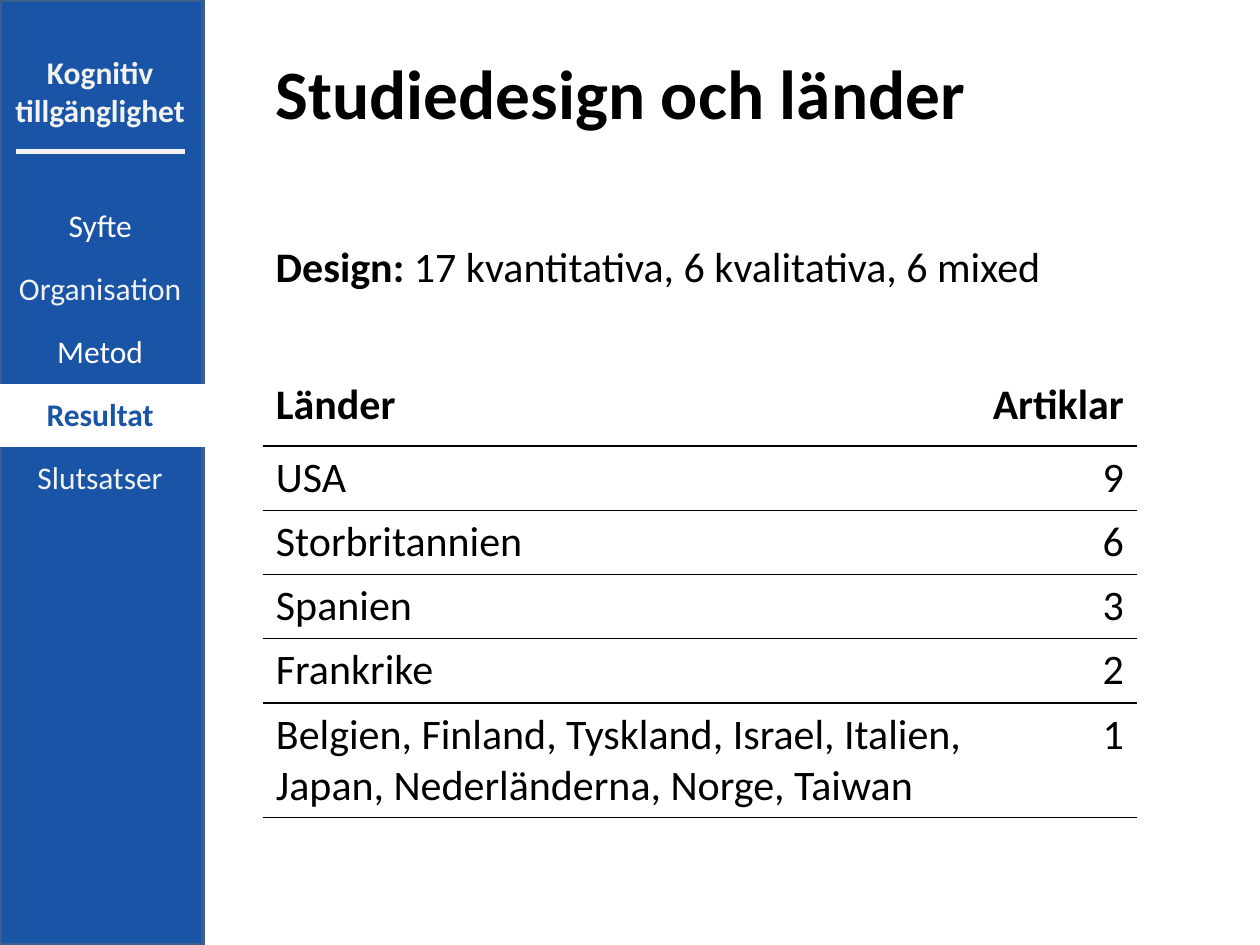
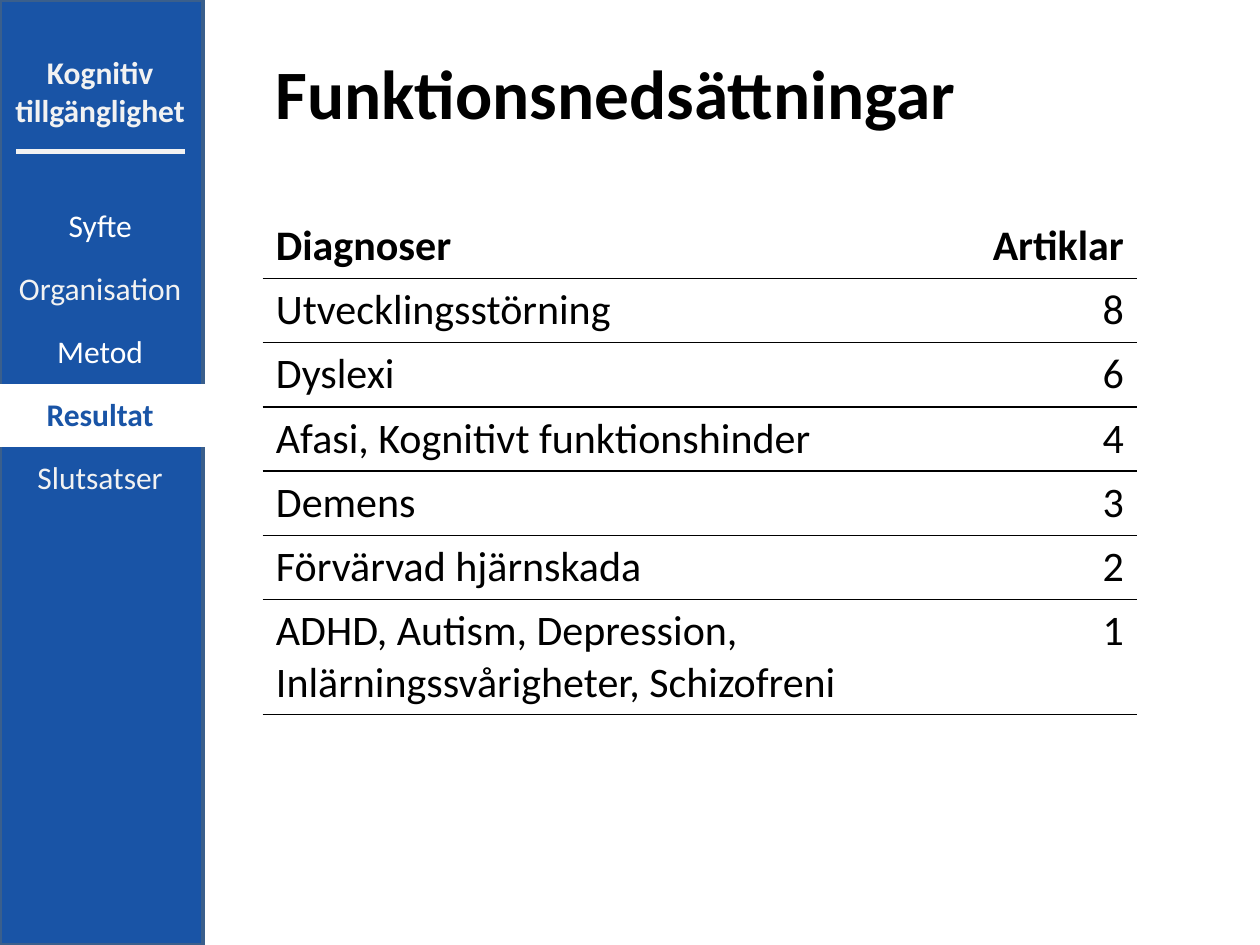
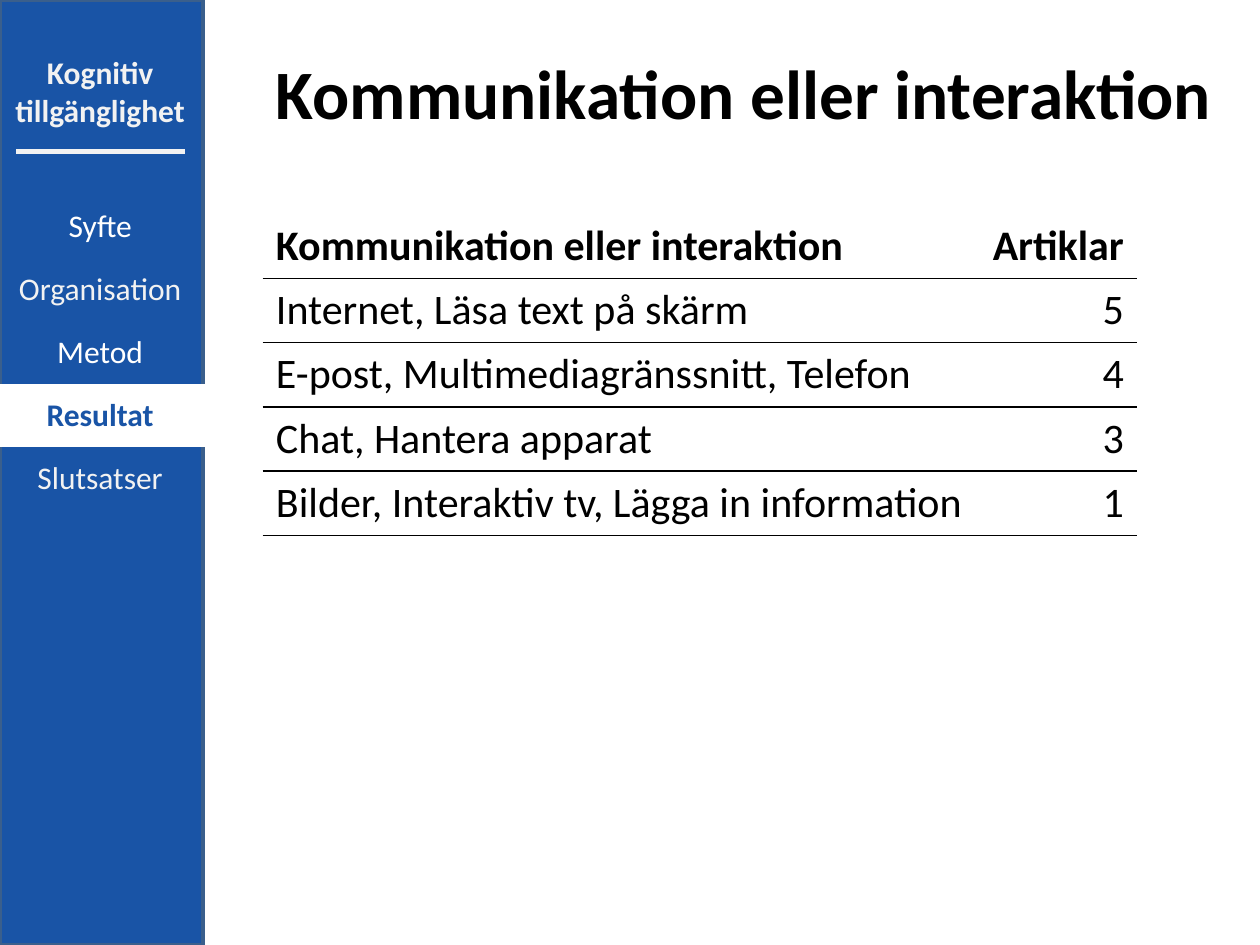
import dataclasses

import lxml.etree
import pptx
import pptx.dml.color
import pptx.enum.shapes
import pptx.enum.text
import pptx.oxml.ns
import pptx.util

Inches = pptx.util.Inches
Align = pptx.enum.text.PP_ALIGN
Anchor = pptx.enum.text.MSO_ANCHOR
qn = pptx.oxml.ns.qn


@dataclasses.dataclass(frozen=True)
class Theme:
    """Colours, type sizes and shared measures of the deck."""
    font: str = "Calibri"
    blue: str = "1954A6"
    edge: str = "3A5F8C"
    pale: str = "F2F2F2"
    white: str = "FFFFFF"
    black: str = "000000"
    head: float = 39.6
    body: float = 24
    menu: float = 18
    left: float = 2.09
    side: float = 1.61
    row: float = 0.51
    plain: str = "{2D5ABB26-0587-4C30-8999-92F81FD0307C}"


THEME = Theme()
MENU = [
    ("Syfte", THEME.white),
    ("Organisation", THEME.pale),
    ("Metod", THEME.white),
    ("Resultat", THEME.blue),
    ("Slutsatser", THEME.pale),
]
ACTIVE = "Resultat"
LANDS = [
    ("Länder", "Artiklar"),
    ("USA", "9"),
    ("Storbritannien", "6"),
    ("Spanien", "3"),
    ("Frankrike", "2"),
    ("Belgien, Finland, Tyskland, Israel, Italien, Japan, Nederländerna, "
     "Norge, Taiwan", "1"),
]
NEEDS = [
    ("Diagnoser", "Artiklar"),
    ("Utvecklingsstörning", "8"),
    ("Dyslexi", "6"),
    ("Afasi, Kognitivt funktionshinder", "4"),
    ("Demens", "3"),
    ("Förvärvad hjärnskada", "2"),
    ("ADHD, Autism, Depression, Inlärningssvårigheter, Schizofreni", "1"),
]
MEDIA = [
    ("Kommunikation eller interaktion", "Artiklar"),
    ("Internet, Läsa text på skärm", "5"),
    ("E-post, Multimediagränssnitt, Telefon", "4"),
    ("Chat, Hantera apparat", "3"),
    ("Bilder, Interaktiv tv, Lägga in information", "1"),
]


def tint(code):
    """Turn a hex code into a colour."""
    return pptx.dml.color.RGBColor.from_string(code)


def box(left, top, width, height):
    """Give a place and size in inches."""
    return Inches(left), Inches(top), Inches(width), Inches(height)


def write(frame, text, size=THEME.body, color=THEME.black, bold=False,
          align=Align.LEFT):
    """Add a formatted run to the first paragraph of a frame."""
    line = frame.paragraphs[0]
    line.alignment = align
    run = line.add_run()
    run.text = text
    run.font.name = THEME.font
    run.font.size = pptx.util.Pt(size)
    run.font.bold = bold
    run.font.color.rgb = tint(color)


def label(slide, place):
    """Add a wrapping text box and return its frame."""
    frame = slide.shapes.add_textbox(*place).text_frame
    frame.word_wrap = True
    return frame


def rule(cell, side, color):
    """Draw one border of a cell."""
    line = lxml.etree.SubElement(cell._tc.get_or_add_tcPr(), qn("a:" + side),
                                 w=str(pptx.util.Pt(1)))
    fill = lxml.etree.SubElement(line, qn("a:solidFill"))
    lxml.etree.SubElement(fill, qn("a:srgbClr"), val=color)


def grid(slide, left, top, cols, rows):
    """Add a table without style and return it."""
    place = box(left, top, sum(cols), sum(rows))
    table = slide.shapes.add_table(len(rows), len(cols), *place).table
    table.first_row = table.horz_banding = False
    table._tbl.tblPr.find(qn("a:tableStyleId")).text = THEME.plain
    for col, width in zip(table.columns, cols):
        col.width = Inches(width)
    for row, height in zip(table.rows, rows):
        row.height = Inches(height)
    return table


def counts(slide, top, data, last=1.26, first=THEME.row, end=THEME.row):
    """Add a table of topics and article counts."""
    rows = [first] + [THEME.row] * (len(data) - 2) + [end]
    table = grid(slide, THEME.left, top, [6.93 - last, last], rows)
    for y, pair in enumerate(data):
        for x, text in enumerate(pair):
            cell = table.cell(y, x)
            rule(cell, "lnL", THEME.white)
            rule(cell, "lnR", THEME.white)
            if y:
                rule(cell, "lnT", THEME.black)
            rule(cell, "lnB", THEME.black)
            cell.fill.background()
            write(cell.text_frame, text, bold=y == 0,
                  align=Align.RIGHT if x else Align.LEFT)


def panel(slide):
    """Add the side band with its heading and rule."""
    band = slide.shapes.add_shape(pptx.enum.shapes.MSO_SHAPE.RECTANGLE,
                                  *box(0, 0, THEME.side, 7.5))
    band.shadow.inherit = False
    band.fill.solid()
    band.fill.fore_color.rgb = tint(THEME.blue)
    band.line.color.rgb = tint(THEME.edge)
    band.line.width = pptx.util.Pt(2)
    write(label(slide, box(-0.01, 0.37, THEME.side, 0.71)),
          "Kognitiv tillgänglighet", size=THEME.menu, color=THEME.pale,
          bold=True, align=Align.CENTER)
    line = slide.shapes.add_connector(
        pptx.enum.shapes.MSO_CONNECTOR.STRAIGHT, *box(0.13, 1.2, 1.47, 1.2))
    line.line.color.rgb = tint(THEME.pale)
    line.line.width = pptx.util.Pt(3)
    lxml.etree.SubElement(line._element.spPr, qn("a:effectLst"))


def menu(slide):
    """Add the section list and mark the active section."""
    table = grid(slide, -0.05, 1.55, [1.69], [0.5] * len(MENU))
    for y, (text, color) in enumerate(MENU):
        cell = table.cell(y, 0)
        cell.margin_left = cell.margin_right = Inches(0.08)
        cell.margin_top = cell.margin_bottom = Inches(0.09)
        cell.vertical_anchor = Anchor.MIDDLE
        if text == ACTIVE:
            cell.fill.solid()
            cell.fill.fore_color.rgb = tint(THEME.white)
        else:
            cell.fill.background()
        write(cell.text_frame, text, size=THEME.menu, color=color,
              bold=text == ACTIVE, align=Align.CENTER)


def page(deck, text, width=7.41):
    """Add a slide with its title, side band and menu."""
    slide = deck.slides.add_slide(deck.slide_layouts[5])
    title = slide.shapes.title
    title.left, title.top, title.width, title.height = box(
        THEME.left, 0.38, width, 0.69)
    title.text_frame.vertical_anchor = Anchor.MIDDLE
    write(title.text_frame, text, size=THEME.head, bold=True)
    panel(slide)
    menu(slide)
    return slide


def main():
    """Build and save the deck."""
    deck = pptx.Presentation()
    deck.slide_width, deck.slide_height = Inches(10), Inches(7.5)

    slide = page(deck, "Studiedesign och länder")
    design = label(slide, box(THEME.left, 1.86, 7.56, 1.89))
    write(design, "Design:", bold=True)
    write(design, " 17 kvantitativa, 6 kvalitativa, 6 mixed")
    counts(slide, 2.96, LANDS, first=0.58, end=0.91)

    slide = page(deck, "Funktionsnedsättningar")
    counts(slide, 1.7, NEEDS, last=1.34, end=0.91)

    slide = page(deck, "Kommunikation eller interaktion", width=7.72)
    counts(slide, 1.7, MEDIA)

    deck.save("out.pptx")


if __name__ == "__main__":
    main()
